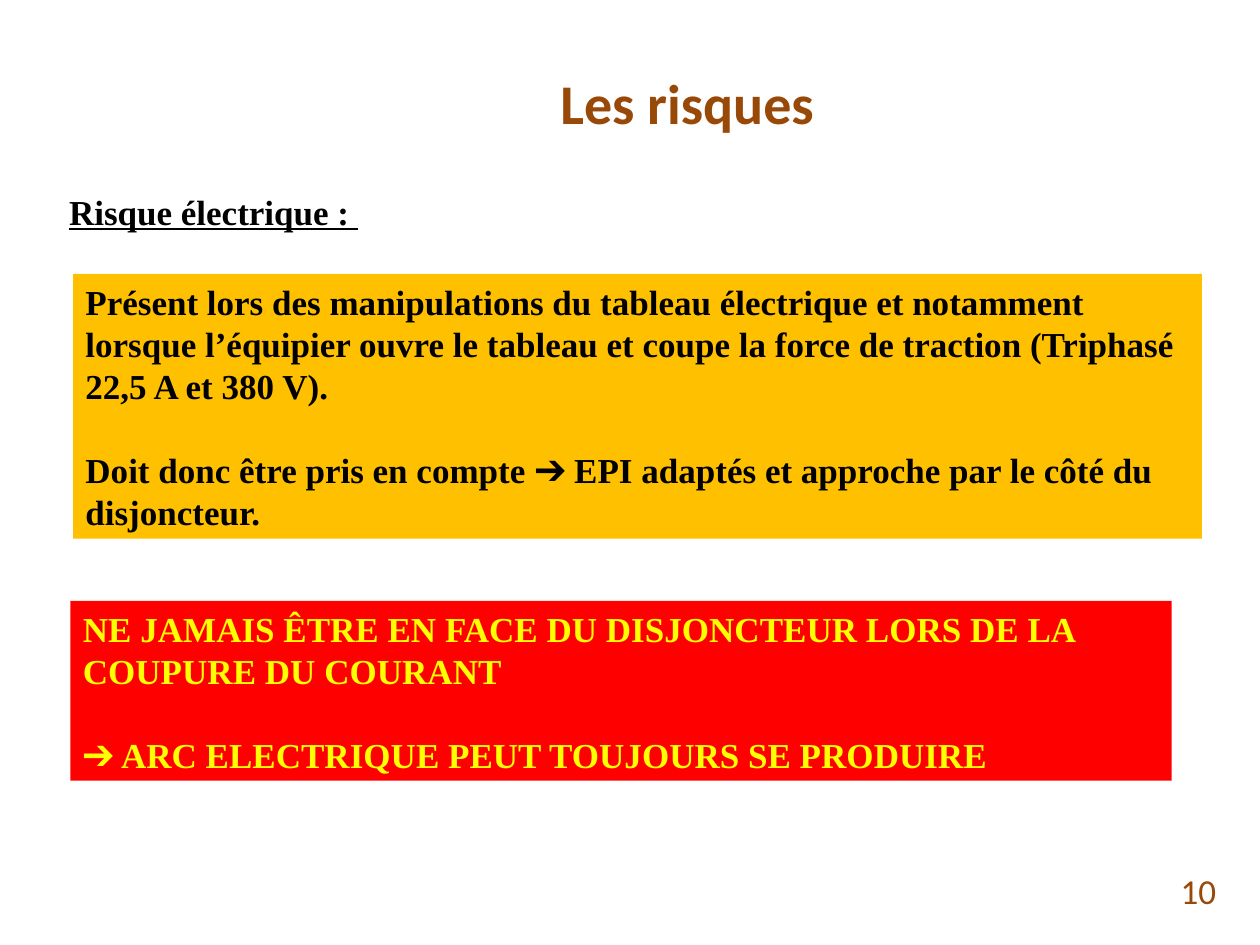
from dataclasses import dataclass

from pptx import Presentation
from pptx.dml.color import RGBColor
from pptx.enum.shapes import MSO_SHAPE as Shape
from pptx.enum.text import MSO_ANCHOR as Anchor, MSO_AUTO_SIZE as AutoSize, PP_ALIGN as Align
from pptx.slide import Slide
from pptx.text.text import TextFrame
from pptx.util import Inches, Pt

WIDTH, HEIGHT = Inches(10), Inches(7.5)
BROWN, BLACK, AMBER, RED, YELLOW = "984807", "000000", "FFC000", "FF0000", "FFFF00"
BODY_FONT, TITLE_FONT = "Times New Roman", "Calibri"
BLANK_LINE = Pt(24)


@dataclass
class Area:
    """A rectangle given as shares of the slide's width and height."""
    left: float
    top: float
    width: float
    height: float

    def box(self) -> tuple[int, int, int, int]:
        return (int(self.left * WIDTH), int(self.top * HEIGHT),
                int(self.width * WIDTH), int(self.height * HEIGHT))


@dataclass
class Panel:
    area: Area
    fill: str
    ink: str
    paragraphs: list[str]


PANELS = [
    Panel(Area(0.058, 0.29, 0.896, 0.28), AMBER, BLACK, [
        "Présent lors des manipulations du tableau électrique et notamment lorsque "
        "l’équipier ouvre le tableau et coupe la force de traction (Triphasé 22,5 A et 380 V).",
        "Doit donc être pris en compte ➔ EPI adaptés et approche par le côté du disjoncteur.",
    ]),
    Panel(Area(0.056, 0.636, 0.874, 0.19), RED, YELLOW, [
        "NE JAMAIS ÊTRE EN FACE DU DISJONCTEUR LORS DE LA COUPURE DU COURANT",
        "➔ ARC ELECTRIQUE PEUT TOUJOURS SE PRODUIRE",
    ]),
]


def color(value: str) -> RGBColor:
    return RGBColor.from_string(value)


def write(frame: TextFrame, paragraphs: list[str], ink: str, font: str = BODY_FONT,
          size: int = 20, bold: bool = True, underline: bool = False,
          align: Align = Align.LEFT, anchor: Anchor = Anchor.TOP) -> None:
    frame.text = "\n".join(paragraphs)
    frame.word_wrap = True
    frame.vertical_anchor = anchor
    for index, para in enumerate(frame.paragraphs):
        para.alignment = align
        if index:
            para.space_before = BLANK_LINE
        for span in para.runs:
            span.font.name, span.font.size = font, Pt(size)
            span.font.bold, span.font.underline = bold, underline
            span.font.color.rgb = color(ink)


def add_panel(page: Slide, panel: Panel) -> None:
    shape = page.shapes.add_shape(Shape.RECTANGLE, *panel.area.box())
    shape.shadow.inherit = False
    shape.fill.solid()
    shape.fill.fore_color.rgb = color(panel.fill)
    shape.line.fill.background()
    write(shape.text_frame, panel.paragraphs, panel.ink)


def main() -> None:
    deck = Presentation()
    deck.slide_width, deck.slide_height = WIDTH, HEIGHT
    page = deck.slides.add_slide(deck.slide_layouts[5])

    title = page.shapes.title
    title.left, title.top, title.width, title.height = Area(0.122, 0.04, 0.847, 0.137).box()
    write(title.text_frame, ["Les risques"], BROWN, TITLE_FONT, 32,
          align=Align.CENTER, anchor=Anchor.MIDDLE)

    number = page.shapes.add_textbox(*Area(0.742, 0.916, 0.233, 0.053).box())
    write(number.text_frame, ["10"], BROWN, TITLE_FONT, bold=False,
          align=Align.RIGHT, anchor=Anchor.MIDDLE)

    heading = page.shapes.add_textbox(*Area(0.045, 0.192, 0.896, 0.059).box())
    write(heading.text_frame, ["Risque électrique : "], BLACK, underline=True,
          align=Align.JUSTIFY)
    heading.text_frame.paragraphs[0].line_spacing = 1.07
    heading.text_frame.auto_size = AutoSize.SHAPE_TO_FIT_TEXT

    for panel in PANELS:
        add_panel(page, panel)
    deck.save("out.pptx")


if __name__ == "__main__":
    main()
